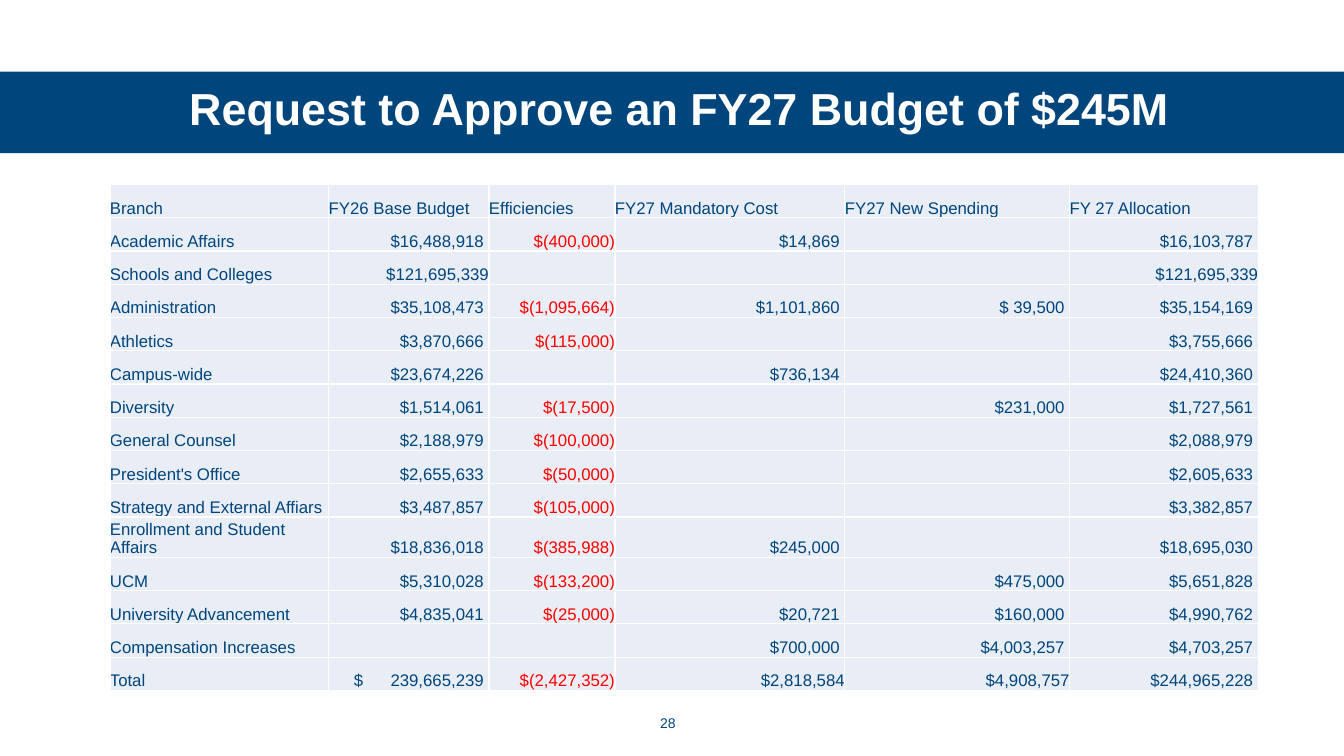
from dataclasses import dataclass

from lxml.etree import SubElement
from pptx import Presentation
from pptx.dml.color import RGBColor
from pptx.enum.shapes import MSO_SHAPE
from pptx.enum.text import MSO_ANCHOR, PP_ALIGN
from pptx.oxml.ns import qn
from pptx.util import Inches, Pt


@dataclass(frozen=True)
class Theme:
    font: str = "Arial"
    navy: str = "00457C"
    white: str = "FFFFFF"
    red: str = "FF0000"
    cell: str = "E9EEF6"
    title_size: int = 32
    table_size: int = 12
    number_size: int = 10


THEME = Theme()
COLUMN_WIDTHS = [2.17, 1.59, 1.25, 2.28, 2.23, 1.87]
ROW_HEIGHT = 0.33
AMOUNT_INSET = 0.05
DOLLAR_INSET = 0.25
FLUSH_AMOUNTS = {"$121,695,339", "$2,818,584", "$4,908,757"}

BUDGET = [
    ["Branch", "FY26 Base Budget", "Efficiencies", "FY27 Mandatory Cost", "FY27 New Spending", "FY 27 Allocation"],
    ["Academic Affairs", "$16,488,918", "$(400,000)", "$14,869", "", "$16,103,787"],
    ["Schools and Colleges", "$121,695,339", "", "", "", "$121,695,339"],
    ["Administration", "$35,108,473", "$(1,095,664)", "$1,101,860", "$ 39,500", "$35,154,169"],
    ["Athletics", "$3,870,666", "$(115,000)", "", "", "$3,755,666"],
    ["Campus-wide", "$23,674,226", "", "$736,134", "", "$24,410,360"],
    ["Diversity", "$1,514,061", "$(17,500)", "", "$231,000", "$1,727,561"],
    ["General Counsel", "$2,188,979", "$(100,000)", "", "", "$2,088,979"],
    ["President's Office", "$2,655,633", "$(50,000)", "", "", "$2,605,633"],
    ["Strategy and External Affiars", "$3,487,857", "$(105,000)", "", "", "$3,382,857"],
    ["Enrollment and Student Affairs", "$18,836,018", "$(385,988)", "$245,000", "", "$18,695,030"],
    ["UCM", "$5,310,028", "$(133,200)", "", "$475,000", "$5,651,828"],
    ["University Advancement", "$4,835,041", "$(25,000)", "$20,721", "$160,000", "$4,990,762"],
    ["Compensation Increases", "", "", "$700,000", "$4,003,257", "$4,703,257"],
    ["Total", "$\t239,665,239", "$(2,427,352)", "$2,818,584", "$4,908,757", "$244,965,228"],
]


def set_attributes(target, values):
    for name, value in values.items():
        setattr(target, name, value)


def write(para, text, size, color, bold=False):
    span = para.add_run()
    span.text = text
    set_attributes(span.font, {"name": THEME.font, "size": Pt(size), "bold": bold})
    span.font.color.rgb = RGBColor.from_string(color)


def add_band(page, left, top, width, height):
    band = page.shapes.add_shape(
        MSO_SHAPE.RECTANGLE, Inches(left), Inches(top), Inches(width), Inches(height))
    band.shadow.inherit = False
    band.fill.solid()
    band.fill.fore_color.rgb = RGBColor.from_string(THEME.navy)
    band.line.fill.background()


def add_label(page, place, text, size, color, frame_format, para_format, bold=False):
    box = page.shapes.add_textbox(*map(Inches, place))
    set_attributes(box.text_frame, {"word_wrap": True, **frame_format})
    para = box.text_frame.paragraphs[0]
    set_attributes(para, para_format)
    write(para, text, size, color, bold)


def add_borders(cell):
    properties = cell._tc.get_or_add_tcPr()
    for side in ("lnL", "lnR", "lnT", "lnB"):
        line = SubElement(properties, qn(f"a:{side}"), w=str(Pt(1)))
        fill = SubElement(line, qn("a:solidFill"))
        SubElement(fill, qn("a:srgbClr"), val=THEME.white)


def add_right_tab(para, position):
    tabs = SubElement(para._p.get_or_add_pPr(), qn("a:tabLst"))
    SubElement(tabs, qn("a:tab"), pos=str(Inches(position)), algn="r")


def fill_cell(cell, text, width):
    """Style one cell; amounts align right, and negative ones are red."""
    is_amount = text.startswith("$")
    is_negative = text.startswith("$(")
    is_spread = "\t" in text
    is_inset = is_amount and not is_negative and not is_spread and text not in FLUSH_AMOUNTS
    set_attributes(cell, {
        "margin_left": Inches(DOLLAR_INSET if is_spread else 0),
        "margin_right": Inches(AMOUNT_INSET if is_inset else 0),
        "margin_top": 0,
        "margin_bottom": 0,
        "vertical_anchor": MSO_ANCHOR.BOTTOM,
    })
    add_borders(cell)
    cell.fill.solid()
    cell.fill.fore_color.rgb = RGBColor.from_string(THEME.cell)
    if not text:
        return
    para = cell.text_frame.paragraphs[0]
    if is_spread:
        add_right_tab(para, width - DOLLAR_INSET - AMOUNT_INSET)
    elif is_amount:
        para.alignment = PP_ALIGN.RIGHT
    write(para, text, THEME.table_size, THEME.red if is_negative else THEME.navy)


def add_budget_table(page, left, top):
    frame = page.shapes.add_table(
        len(BUDGET), len(COLUMN_WIDTHS), Inches(left), Inches(top),
        Inches(sum(COLUMN_WIDTHS)), Inches(ROW_HEIGHT * len(BUDGET)))
    table = frame.table
    set_attributes(table, {"first_row": False, "horz_banding": False})
    for column, width in zip(table.columns, COLUMN_WIDTHS):
        column.width = Inches(width)
    for row, texts in zip(table.rows, BUDGET):
        row.height = Inches(ROW_HEIGHT)
        for cell, text, width in zip(row.cells, texts, COLUMN_WIDTHS):
            fill_cell(cell, text, width)


def main():
    deck = Presentation()
    set_attributes(deck, {"slide_width": Inches(13.33), "slide_height": Inches(7.5)})
    page = deck.slides.add_slide(deck.slide_layouts[6])
    add_band(page, 0, 0.71, 13.33, 0.81)
    add_label(page, (0.61, 0.7, 12.26, 0.81), "Request to Approve an FY27 Budget of $245M",
              THEME.title_size, THEME.white, {"vertical_anchor": MSO_ANCHOR.MIDDLE},
              {"alignment": PP_ALIGN.CENTER, "line_spacing": 0.9}, bold=True)
    add_budget_table(page, 1.09, 1.83)
    add_label(page, (6.45, 7.04, 0.43, 0.27), "28", THEME.number_size, THEME.navy,
              {"vertical_anchor": MSO_ANCHOR.TOP}, {"alignment": PP_ALIGN.LEFT})
    deck.save("out.pptx")


if __name__ == "__main__":
    main()
